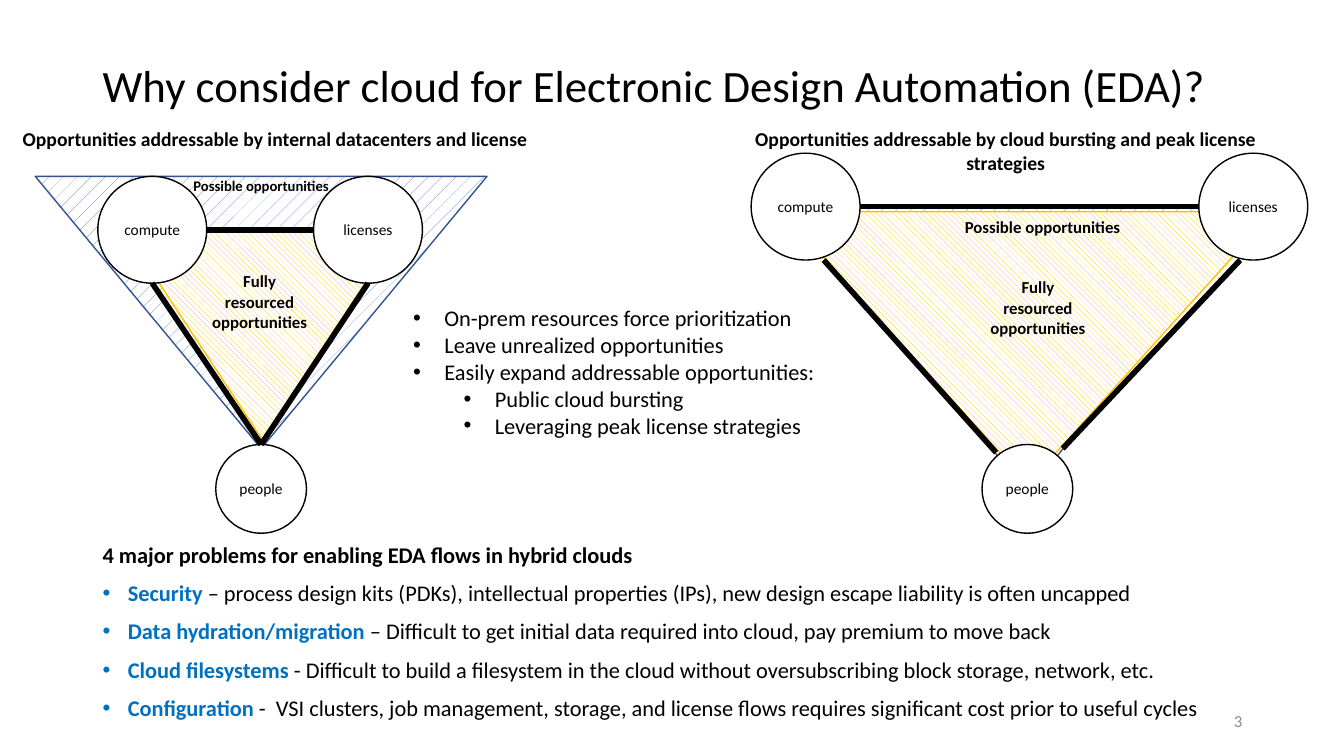
"""Build the slide on cloud opportunities for Electronic Design Automation."""
from lxml import etree
from pptx import Presentation
from pptx.dml.color import RGBColor
from pptx.enum.dml import MSO_PATTERN
from pptx.enum.shapes import MSO_CONNECTOR, MSO_SHAPE
from pptx.enum.text import MSO_ANCHOR, PP_ALIGN
from pptx.oxml.ns import qn
from pptx.util import Pt

PX = 9144
FONT = "Calibri"
LEFT, CENTER, RIGHT = PP_ALIGN.LEFT, PP_ALIGN.CENTER, PP_ALIGN.RIGHT
TOP, MIDDLE = MSO_ANCHOR.TOP, MSO_ANCHOR.MIDDLE
DOTS, STRIPES = MSO_PATTERN.PERCENT_5, MSO_PATTERN.WIDE_DOWNWARD_DIAGONAL
TRIANGLE, OVAL = MSO_SHAPE.ISOSCELES_TRIANGLE, MSO_SHAPE.OVAL
STRAIGHT = MSO_CONNECTOR.STRAIGHT

COLORS = {"black": "000000", "white": "FFFFFF", "grey": "8C8C8C", "key": "0070C0",
          "possible": "4472C4", "possible_line": "325491", "resourced": "FFC000"}

TITLE = "Why consider cloud for Electronic Design Automation (EDA)?"
PAGE = "3"
HEADINGS = [
    ("Opportunities addressable by internal datacenters and license", (0, 121, 546, 34)),
    ("Opportunities addressable by cloud bursting and peak license strategies",
     (698, 121, 599, 34)),
]
PROBLEMS_HEADING = "4 major problems for enabling EDA flows in hybrid clouds"
PROBLEMS = [
    ("Security", " – process design kits (PDKs), intellectual properties (IPs), "
                 "new design escape liability is often uncapped"),
    ("Data hydration/migration", " – Difficult to get initial data required into cloud, "
                                 "pay premium to move back"),
    ("Cloud filesystems", " - Difficult to build a filesystem in the cloud without "
                          "oversubscribing block storage, network, etc."),
    ("Configuration", " -  VSI clusters, job management, storage, and license flows "
                      "requires significant cost prior to useful cycles"),
]
POINTS = [
    (0, "On-prem resources force prioritization"),
    (0, "Leave unrealized opportunities"),
    (0, "Easily expand addressable opportunities:"),
    (1, "Public cloud bursting"),
    (1, "Leveraging peak license strategies"),
]
RESOURCED, POSSIBLE = "Fully resourced opportunities", "Possible opportunities"
DIAGRAMS = [
    {"possible": (35, 175, 448, 270), "resourced": (123, 228, 274, 208),
     "circles": {"compute": (97, 175, 108, 106), "people": (214, 441, 90, 88),
                 "licenses": (311, 175, 108, 106)},
     "lines": [(205, 228, 311, 228), (151, 281, 259, 441), (365, 281, 259, 441)],
     "resourced_label": (199, 264, 117, 71),
     "possible_label": (182, 171, 163, 29), "possible_size": 10.5},
    {"possible": (795, 205, 448, 285), "resourced": (776, 210, 487, 270),
     "circles": {"compute": (745, 152, 108, 106), "people": (974, 441, 90, 88),
                 "licenses": (1189, 152, 108, 106)},
     "lines": [(853, 205, 1189, 205), (817, 258, 988, 449), (1230, 258, 1054, 445)],
     "resourced_label": (971, 270, 117, 71),
     "possible_label": (947, 210, 175, 30), "possible_size": 12},
]


def emu(box):
    return [v * PX for v in box]


def rgb(name):
    return RGBColor.from_string(COLORS[name])


def add_run(p, text, size, color="black", bold=False):
    r = p.add_run()
    r.text = text
    r.font.name, r.font.size, r.font.bold = FONT, Pt(size), bold
    r.font.color.rgb = rgb(color)


def add_bullet(p, margin, hang, color="black"):
    ppr = p._p.get_or_add_pPr()
    ppr.set("marL", str(margin * PX))
    ppr.set("indent", str(-hang * PX))
    tint = etree.SubElement(etree.SubElement(ppr, qn("a:buClr")), qn("a:srgbClr"))
    tint.set("val", COLORS[color])
    etree.SubElement(ppr, qn("a:buFont")).set("typeface", "Arial")
    etree.SubElement(ppr, qn("a:buChar")).set("char", "•")


def add_box(s, box, anchor=TOP, wrap=True):
    tf = s.shapes.add_textbox(*emu(box)).text_frame
    tf.word_wrap, tf.vertical_anchor = wrap, anchor
    return tf


def add_label(s, box, text, size, bold=False, align=LEFT, anchor=TOP, wrap=True):
    p = add_box(s, box, anchor, wrap).paragraphs[0]
    p.alignment = align
    add_run(p, text, size, bold=bold, color="grey" if text == PAGE else "black")
    return p


def next_paragraph(tf, index):
    return tf.add_paragraph() if index else tf.paragraphs[0]


def add_outlined(s, kind, box, line):
    sp = s.shapes.add_shape(kind, *emu(box))
    sp.shadow.inherit = False
    sp.line.color.rgb, sp.line.width = rgb(line), Pt(1)
    return sp


def add_triangle(s, box, pattern, color, line):
    sp = add_outlined(s, TRIANGLE, box, line)
    sp.rotation = 180
    sp.fill.patterned()
    sp.fill.pattern = pattern
    sp.fill.fore_color.rgb, sp.fill.back_color.rgb = rgb(color), rgb("white")


def add_circle(s, box, text):
    sp = add_outlined(s, OVAL, box, "black")
    sp.fill.solid()
    sp.fill.fore_color.rgb = rgb("white")
    tf = sp.text_frame
    tf.vertical_anchor = MIDDLE
    p = tf.paragraphs[0]
    p.alignment = CENTER
    add_run(p, text, 11)


def add_line(s, ends):
    line = s.shapes.add_connector(STRAIGHT, *emu(ends))
    line.line.color.rgb, line.line.width = rgb("black"), Pt(4)
    etree.SubElement(line._element.spPr, qn("a:effectLst"))


def add_diagram(s, d):
    add_triangle(s, d["possible"], DOTS, "possible", "possible_line")
    add_triangle(s, d["resourced"], STRIPES, "resourced", "resourced")
    for name, box in d["circles"].items():
        add_circle(s, box, name)
    for ends in d["lines"]:
        add_line(s, ends)
    add_label(s, d["resourced_label"], RESOURCED, 12, True, CENTER)
    add_label(s, d["possible_label"], POSSIBLE, d["possible_size"], True, wrap=False)


def add_problems(s):
    tf = add_box(s, (92, 535, 1150, 190))
    for i, (key, detail) in enumerate([(PROBLEMS_HEADING, "")] + PROBLEMS):
        p = next_paragraph(tf, i)
        p.line_spacing, p.space_before = 0.9, Pt(10)
        add_run(p, key, 16, "key" if detail else "black", True)
        if detail:
            add_bullet(p, 25, 25, "key")
            add_run(p, detail, 16)


def add_points(s):
    tf = add_box(s, (400, 297, 423, 145), wrap=False)
    for i, (level, text) in enumerate(POINTS):
        p = next_paragraph(tf, i)
        p.level = level
        add_bullet(p, 31 + 50 * level, 31)
        add_run(p, text, 16)


def main():
    prs = Presentation()
    prs.slide_width, prs.slide_height = 1333 * PX, 750 * PX
    s = prs.slides.add_slide(prs.slide_layouts[6])
    add_label(s, (92, 15, 1150, 145), TITLE, 32, anchor=MIDDLE).line_spacing = 0.9
    add_problems(s)
    add_label(s, (942, 695, 300, 40), PAGE, 12, align=RIGHT, anchor=MIDDLE)
    for diagram in DIAGRAMS:
        add_diagram(s, diagram)
    for text, box in HEADINGS:
        add_label(s, box, text, 14, True, CENTER)
    add_points(s)
    prs.save("out.pptx")


if __name__ == "__main__":
    main()
